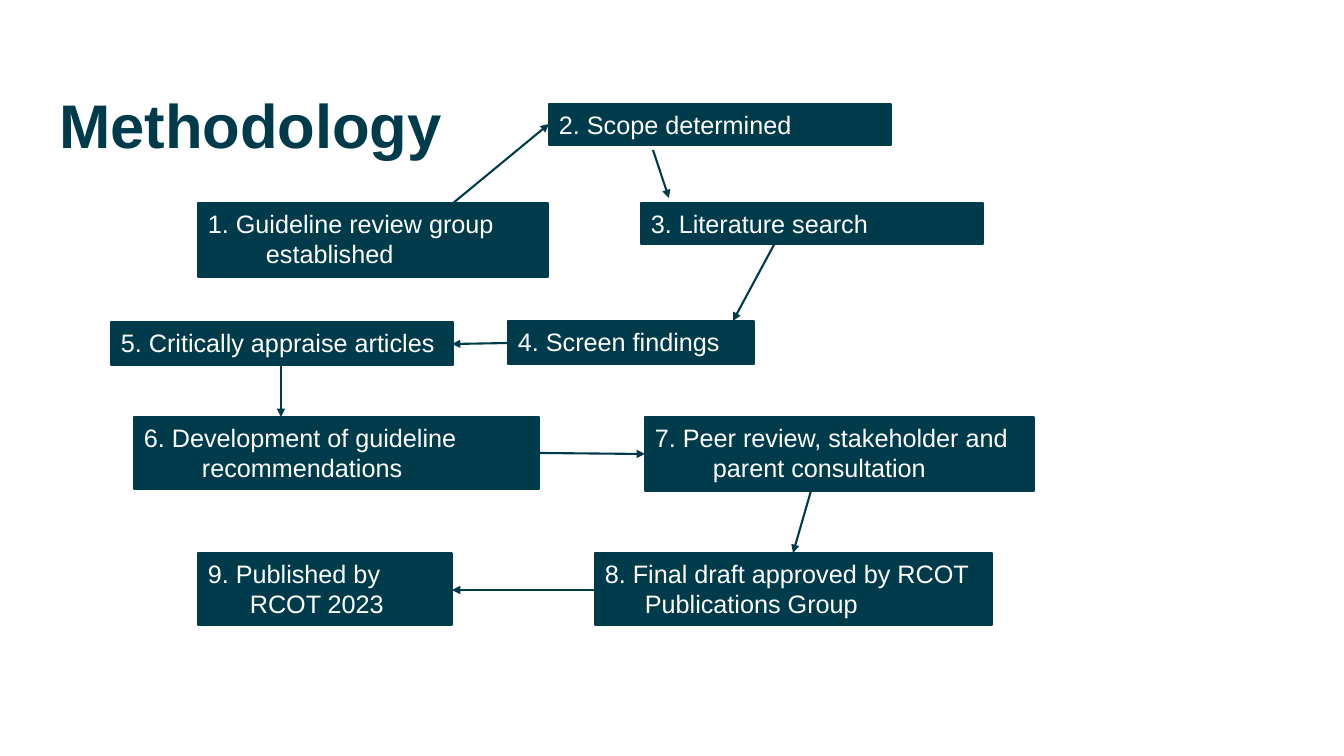
from lxml.etree import SubElement
from pptx import Presentation
from pptx.dml.color import RGBColor
from pptx.enum.shapes import MSO_CONNECTOR, MSO_SHAPE
from pptx.enum.text import MSO_ANCHOR, PP_ALIGN
from pptx.oxml.ns import qn
from pptx.util import Pt

TEAL = RGBColor(0x00, 0x3B, 0x4C)
WHITE = RGBColor(0xFF, 0xFF, 0xFF)
FONT = "Arial"
EMU_PER_PX = 914400 / 100.8

TITLE = "Methodology"
TITLE_BOX = (59, 89, 1131, 80)

# Each paragraph: text, left margin, first-line indent
# Each step: left, top, width, height, paragraphs
STEPS = [
    (198, 203, 350, 74, [("1. Guideline review group established", 58, -58)]),
    (549, 104, 342, 41, [("2. Scope determined", 58, -58)]),
    (641, 203, 342, 41, [("3. Literature search", 58, -58)]),
    (508, 321, 246, 43, [("4. Screen findings", 0, 0)]),
    (111, 322, 342, 43, [("5. Critically appraise articles", 0, 0)]),
    (134, 417, 405, 72, [("6. Development of guideline recommendations", 58, -58)]),
    (645, 417, 389, 74, [("7. Peer review, stakeholder and parent consultation", 58, -58)]),
    (595, 553, 397, 72, [("8. Final draft approved by RCOT Publications Group", 40, -40)]),
    (198, 553, 254, 72, [("9. Published by", 58, -58), ("RCOT 2023", 42, 0)]),
]

# Start x, start y, end x, end y
ARROWS = [
    (452, 204, 549, 124),
    (653, 150, 669, 198),
    (775, 243, 733, 321),
    (508, 343, 452, 344),
    (281, 365, 281, 417),
    (539, 453, 645, 454),
    (811, 491, 793, 553),
    (595, 590, 452, 590),
]


def px(length):
    return round(length * EMU_PER_PX)


def add_run(paragraph, text, size, color, bold=False):
    run = paragraph.add_run()
    run.text = text
    run.font.name = FONT
    run.font.size = Pt(size)
    run.font.bold = bold
    run.font.color.rgb = color


def set_title(slide):
    title = slide.shapes.title
    title.left, title.top, title.width, title.height = map(px, TITLE_BOX)
    frame = title.text_frame
    frame.margin_left = frame.margin_right = frame.margin_top = frame.margin_bottom = 0
    frame.vertical_anchor = MSO_ANCHOR.MIDDLE
    paragraph = frame.paragraphs[0]
    paragraph.alignment = PP_ALIGN.LEFT
    paragraph.line_spacing = 0.9
    add_run(paragraph, TITLE, 44, TEAL, bold=True)


def add_step(slide, left, top, width, height, paragraphs):
    shape = slide.shapes.add_shape(
        MSO_SHAPE.RECTANGLE, px(left), px(top), px(width), px(height))
    shape.shadow.inherit = False
    shape.fill.solid()
    shape.fill.fore_color.rgb = TEAL
    shape.line.color.rgb = TEAL
    shape.line.width = Pt(2)
    frame = shape.text_frame
    frame.word_wrap = True
    frame.vertical_anchor = MSO_ANCHOR.TOP
    for index, (text, margin, indent) in enumerate(paragraphs):
        paragraph = frame.add_paragraph() if index else frame.paragraphs[0]
        paragraph.alignment = PP_ALIGN.LEFT
        properties = paragraph._p.get_or_add_pPr()
        properties.set("marL", str(px(margin)))
        properties.set("indent", str(px(indent)))
        add_run(paragraph, text, 18, WHITE)


def add_arrow(slide, ends):
    connector = slide.shapes.add_connector(MSO_CONNECTOR.STRAIGHT, *map(px, ends))
    connector.line.color.rgb = TEAL
    connector.line.width = Pt(1.5)
    SubElement(connector.line._get_or_add_ln(), qn("a:tailEnd"), type="triangle")
    SubElement(connector._element.spPr, qn("a:effectLst"))


def main():
    presentation = Presentation()
    presentation.slide_width = px(1344)
    presentation.slide_height = px(756)
    slide = presentation.slides.add_slide(presentation.slide_layouts[5])
    set_title(slide)
    for step in STEPS:
        add_step(slide, *step)
    for ends in ARROWS:
        add_arrow(slide, ends)
    presentation.save("out.pptx")


if __name__ == "__main__":
    main()
